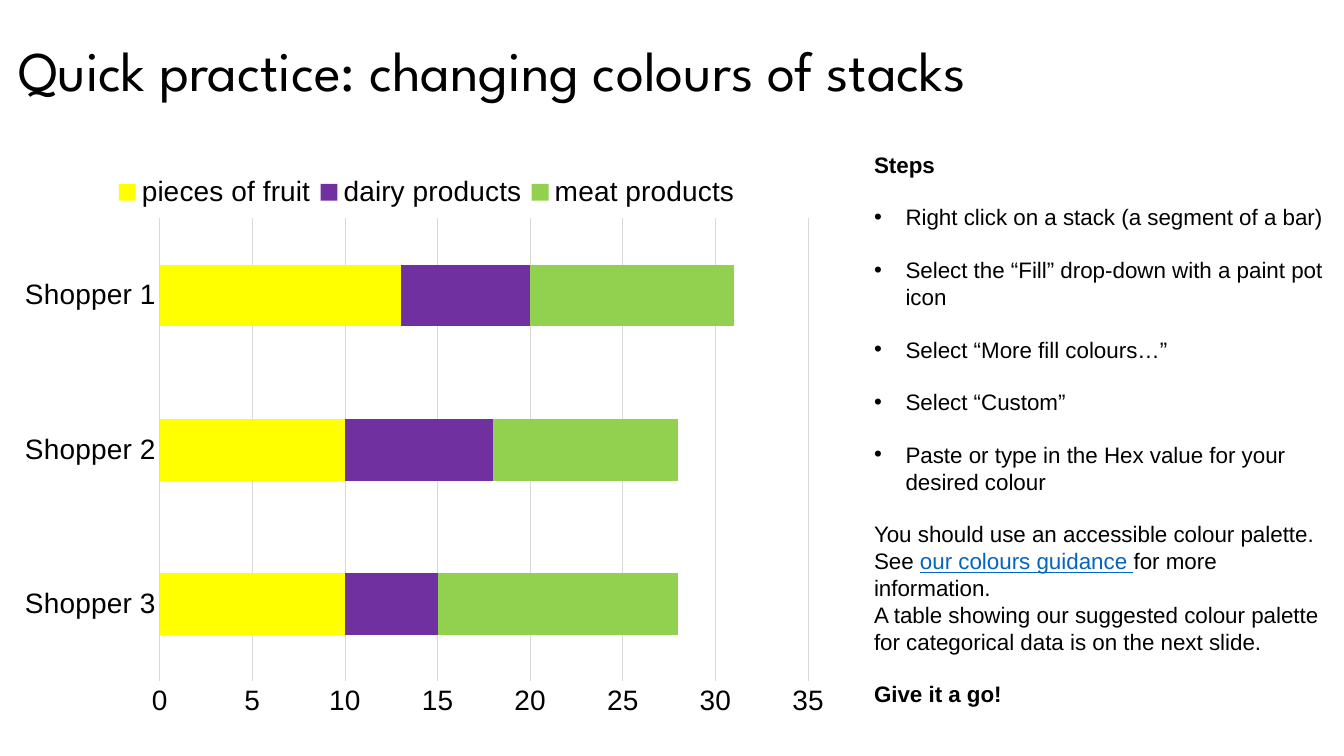
from lxml import etree
from pptx import Presentation
from pptx import util as u
from pptx.chart.data import CategoryChartData
from pptx.dml.color import RGBColor
from pptx.enum import chart as charts, shapes, text
from pptx.oxml.ns import qn

SHOPPERS = ["Shopper 3", "Shopper 2", "Shopper 1"]
PRODUCTS = [
    ("pieces of fruit", [10, 10, 13], "FFFF00"),
    ("dairy products", [5, 8, 7], "7030A0"),
    ("meat products", [13, 10, 11], "92D050"),
]
STEPS = [
    "Right click on a stack (a segment of a bar)",
    "Select the “Fill” drop-down with a paint pot icon",
    "Select “More fill colours…”",
    "Select “Custom”",
    "Paste or type in the Hex value for your desired colour",
]
GUIDANCE = [
    ("You should use an accessible colour palette. See ", {}),
    ("our colours guidance ", {"color": "0563C1", "underline": True}),
    ("for more information.", {}),
]
PALETTE = "A table showing our suggested colour palette for categorical data is on the next slide."


def px(value):
    return u.Emu(value * 9525)


def rgb(value):
    return RGBColor.from_string(value)


class SlideBuilder:
    """Holds the style and the current slide, and adds elements to it."""

    body = {"name": "Arial", "size": u.Pt(16), "bold": False, "color": "000000"}
    title = {**body, "name": "League Spartan", "size": u.Pt(40)}
    label = {**body, "size": u.Pt(20)}
    grid = "D9D9D9"
    line_gap = u.Pt(18.4)

    def __init__(self, presentation):
        self.slide = presentation.slides.add_slide(presentation.slide_layouts[6])

    def set_font(self, font, style):
        for name, value in style.items():
            if name == "color":
                font.color.rgb = rgb(value)
            else:
                setattr(font, name, value)

    def set_line(self, line):
        line.color.rgb = rgb(self.grid)
        line.width = u.Pt(0.75)

    def set_layout(self, parent, index, values):
        for old in parent.findall(qn("c:layout")):
            parent.remove(old)
        layout = etree.Element(qn("c:layout"))
        parent.insert(index, layout)
        manual = etree.SubElement(layout, qn("c:manualLayout"))
        for name, value in values.items():
            etree.SubElement(manual, qn("c:" + name)).set("val", str(value))

    def add_box(self, left, top, width, height):
        shape = self.slide.shapes.add_shape(
            shapes.MSO_SHAPE.RECTANGLE, px(left), px(top), px(width), px(height))
        shape.shadow.inherit = False
        shape.fill.solid()
        shape.fill.fore_color.rgb = rgb("FFFFFF")
        shape.line.fill.background()
        shape.text_frame.word_wrap = True
        shape.text_frame.vertical_anchor = text.MSO_ANCHOR.TOP
        return shape.text_frame

    def add_paragraph(self, frame, runs, style, **spacing):
        paragraph = frame.paragraphs[0]
        if paragraph.runs:
            paragraph = frame.add_paragraph()
        paragraph.alignment = text.PP_ALIGN.LEFT
        for name, value in spacing.items():
            setattr(paragraph, name, value)
        for words, changes in runs:
            run = paragraph.add_run()
            run.text = words
            self.set_font(run.font, {**style, **changes})
        return paragraph

    def add_bullet(self, frame, words):
        paragraph = self.add_paragraph(
            frame, [(words, {})], self.body, space_before=self.line_gap)
        properties = paragraph._p.get_or_add_pPr()
        properties.set("marL", str(px(30)))
        properties.set("indent", str(-px(30)))
        etree.SubElement(properties, qn("a:buFont")).set("typeface", "Arial")
        etree.SubElement(properties, qn("a:buChar")).set("char", "•")

    def add_stacked_bars(self, left, top, width, height, categories, series_rows):
        data = CategoryChartData()
        data.categories = categories
        for name, values, _ in series_rows:
            data.add_series(name, values)
        chart = self.slide.shapes.add_chart(
            charts.XL_CHART_TYPE.BAR_STACKED,
            px(left), px(top), px(width), px(height), data).chart
        chart.has_title = False
        self.set_font(chart.font, self.label)

        plot = chart.plots[0]
        plot.gap_width, plot.overlap, plot.vary_by_categories = 150, 100, False
        for series, (_, _, color) in zip(plot.series, series_rows):
            series.format.fill.solid()
            series.format.fill.fore_color.rgb = rgb(color)

        for axis in (chart.category_axis, chart.value_axis):
            axis.major_tick_mark = axis.minor_tick_mark = charts.XL_TICK_MARK.NONE
            self.set_font(axis.tick_labels.font, self.label)
        chart.category_axis.has_major_gridlines = False
        self.set_line(chart.category_axis.format.line)
        scale = chart.value_axis
        scale.minimum_scale, scale.maximum_scale, scale.major_unit = 0, 35, 5
        scale.format.line.fill.background()
        scale.has_major_gridlines = True
        self.set_line(scale.major_gridlines.format.line)

        chart.has_legend = True
        legend = chart.legend
        legend.position = charts.XL_LEGEND_POSITION.TOP
        legend.include_in_layout = False
        self.set_font(legend.font, self.label)
        edges = {"xMode": "edge", "yMode": "edge"}
        self.set_layout(legend._element, 1, {
            **edges, "x": 0.18, "y": 0.04, "w": 0.71, "h": 0.08})
        self.set_layout(chart._chartSpace.chart.plotArea, 0, {
            "layoutTarget": "inner", **edges,
            "x": 0.237, "y": 0.125, "w": 0.724, "h": 0.799})


def main():
    presentation = Presentation()
    presentation.slide_width, presentation.slide_height = px(1280), px(720)
    builder = SlideBuilder(presentation)
    builder.add_stacked_bars(-50, 139, 853, 552, SHOPPERS, PRODUCTS)

    heading = builder.add_box(8, 16, 1207, 120)
    builder.add_paragraph(
        heading, [("Quick practice: changing colours of stacks", {})], builder.title,
        line_spacing=1.2, space_before=u.Pt(11), space_after=u.Pt(6))

    steps = builder.add_box(823, 139, 450, 553)
    strong = {"bold": True}
    builder.add_paragraph(steps, [("Steps", strong)], builder.body)
    for step in STEPS:
        builder.add_bullet(steps, step)
    builder.add_paragraph(steps, GUIDANCE, builder.body, space_before=builder.line_gap)
    builder.add_paragraph(steps, [(PALETTE, {})], builder.body)
    builder.add_paragraph(
        steps, [("Give it a go!", strong)], builder.body, space_before=builder.line_gap)
    presentation.save("out.pptx")


if __name__ == "__main__":
    main()
